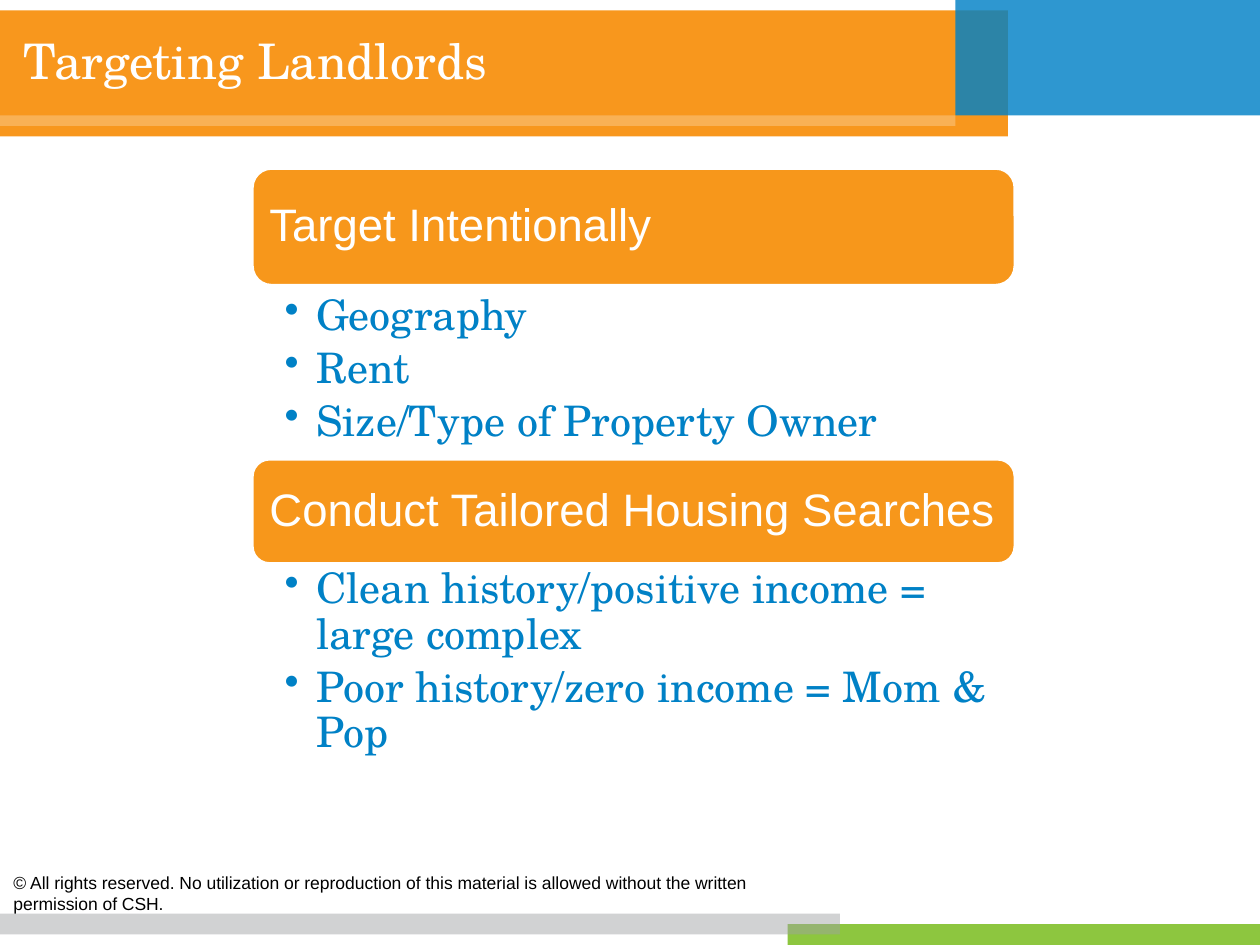
import pptx
import pptx.dml.color
import pptx.enum.shapes
import pptx.enum.text
import pptx.oxml.ns
import pptx.util
from lxml import etree

THEME = {
    "orange": "F8971D", "header": "F7971B", "blue": "0081C6", "green": "8DC63F",
    "gray": "9FA1A4", "white": "FFFFFF", "black": "000000",
    "serif": "TeX Gyre Schola", "sans": "Arial",
    "title_size": 28, "header_size": 26, "bullet_size": 24, "footer_size": 10,
}

TITLE = "Targeting Landlords"
FOOTER = ("© All rights reserved. No utilization or reproduction of this material "
          "is allowed without the written permission of CSH.")

# Heights are in grid rows.
SECTIONS = [
    {"header": "Target Intentionally", "bar": 11.2, "label": 10, "gap": 0.5, "body": 15.4,
     "bullets": ["Geography", "Rent", "Size/Type of Property Owner"]},
    {"header": "Conduct Tailored Housing Searches", "bar": 10, "label": 11.2, "gap": 0, "body": 19.7,
     "bullets": ["Clean history/positive income = large complex",
                 "Poor history/zero income = Mom & Pop"]},
]

# Column, row, columns wide, rows high, colour, opacity in percent
BANDS = [
    (0, 1, 96, 12, "orange", 100),
    (91, 0, 29, 11, "blue", 82),
    (75, 88, 45, 2, "green", 100),
    (0, 87, 80, 2, "gray", 48),
    (0, 11, 91, 1, "white", 25),
]

SLIDE_WIDTH, SLIDE_HEIGHT = pptx.util.Inches(10), pptx.util.Inches(7.5)
CELL = SLIDE_WIDTH / 120  # square grid of 120 columns by 90 rows
COLUMN_LEFT, COLUMN_WIDTH, FIRST_ROW, SECTION_GAP = 24, 72.7, 16, 0.6
LABEL_INDENT = 0.35


def on_grid(*cells):
    return [round(cell * CELL) for cell in cells]


def color(name):
    return pptx.dml.color.RGBColor.from_string(THEME[name])


def add_block(page, kind, place, fill, opacity=100):
    block = page.shapes.add_shape(kind, *on_grid(*place))
    block.shadow.inherit = False
    block.fill.solid()
    block.fill.fore_color.rgb = color(fill)
    block.line.fill.background()
    if opacity < 100:
        tint = block._element.spPr.find(".//" + pptx.oxml.ns.qn("a:srgbClr"))
        etree.SubElement(tint, pptx.oxml.ns.qn("a:alpha"), val=str(opacity * 1000))
    return block


def add_text(page, place, lines, font, size, ink, insets, spacing=1.0,
             middle=False, indent=None, bullet=False, space_before=0):
    """Add a box with one paragraph per line; insets and indent are in inches."""
    box = page.shapes.add_textbox(*on_grid(*place))
    frame = box.text_frame
    frame.word_wrap = True
    if middle:
        frame.vertical_anchor = pptx.enum.text.MSO_ANCHOR.MIDDLE
    for side, inset in zip(("left", "top", "right", "bottom"), insets):
        setattr(frame, "margin_" + side, pptx.util.Inches(inset))
    for index, line in enumerate(lines):
        para = frame.paragraphs[0] if index == 0 else frame.add_paragraph()
        para.text = line
        para.line_spacing = spacing
        if index and space_before:
            para.space_before = pptx.util.Pt(space_before)
        properties = para._p.get_or_add_pPr()
        if indent:
            for name, length in zip(("marL", "indent"), indent):
                properties.set(name, str(pptx.util.Inches(length)))
        if bullet:
            para.level = 1
            tint = etree.SubElement(properties, pptx.oxml.ns.qn("a:buClr"))
            etree.SubElement(tint, pptx.oxml.ns.qn("a:srgbClr"), val=THEME[ink])
            etree.SubElement(properties, pptx.oxml.ns.qn("a:buChar"), char="•")
        para.font.name = THEME[font]
        para.font.size = pptx.util.Pt(THEME[size])
        para.font.color.rgb = color(ink)


def add_section(page, section, row):
    """Draw a header bar with its bullets and return the row below them."""
    bar, label = section["bar"], section["label"]
    block = add_block(page, pptx.enum.shapes.MSO_SHAPE.ROUNDED_RECTANGLE,
                      (COLUMN_LEFT, row, COLUMN_WIDTH, bar), "header")
    block.line.color.rgb = color("white")
    block.line.width = pptx.util.Pt(2)
    add_text(page, (COLUMN_LEFT + LABEL_INDENT, row + (bar - label) / 2,
                    COLUMN_WIDTH - 2 * LABEL_INDENT, label),
             [section["header"]], "sans", "header_size", "white",
             (0.11, 0.11, 0.11, 0.11), spacing=0.9, middle=True)
    row += bar + section["gap"]
    add_text(page, (COLUMN_LEFT, row, COLUMN_WIDTH, section["body"]),
             section["bullets"], "serif", "bullet_size", "blue",
             (0.26, 0.03, 0.17, 0.03), spacing=0.9, indent=(0.25, -0.25),
             bullet=True, space_before=4.4)
    return row + section["body"]


def main():
    deck = pptx.Presentation()
    deck.slide_width, deck.slide_height = SLIDE_WIDTH, SLIDE_HEIGHT
    page = deck.slides.add_slide(deck.slide_layouts[6])
    for *place, fill, opacity in BANDS:
        add_block(page, pptx.enum.shapes.MSO_SHAPE.RECTANGLE, place, fill, opacity)
    add_text(page, (0.1, 82.5, 80, 3.25), [FOOTER], "sans", "footer_size", "black",
             (0.1, 0.05, 0.1, 0.05))
    add_text(page, (1, 2.25, 67.7, 8), [TITLE], "serif", "title_size", "white",
             (0, 0, 0, 0), spacing=1.12, indent=(0.38, -0.28))
    row = FIRST_ROW
    for section in SECTIONS:
        row = add_section(page, section, row) + SECTION_GAP
    deck.save("out.pptx")


if __name__ == "__main__":
    main()
